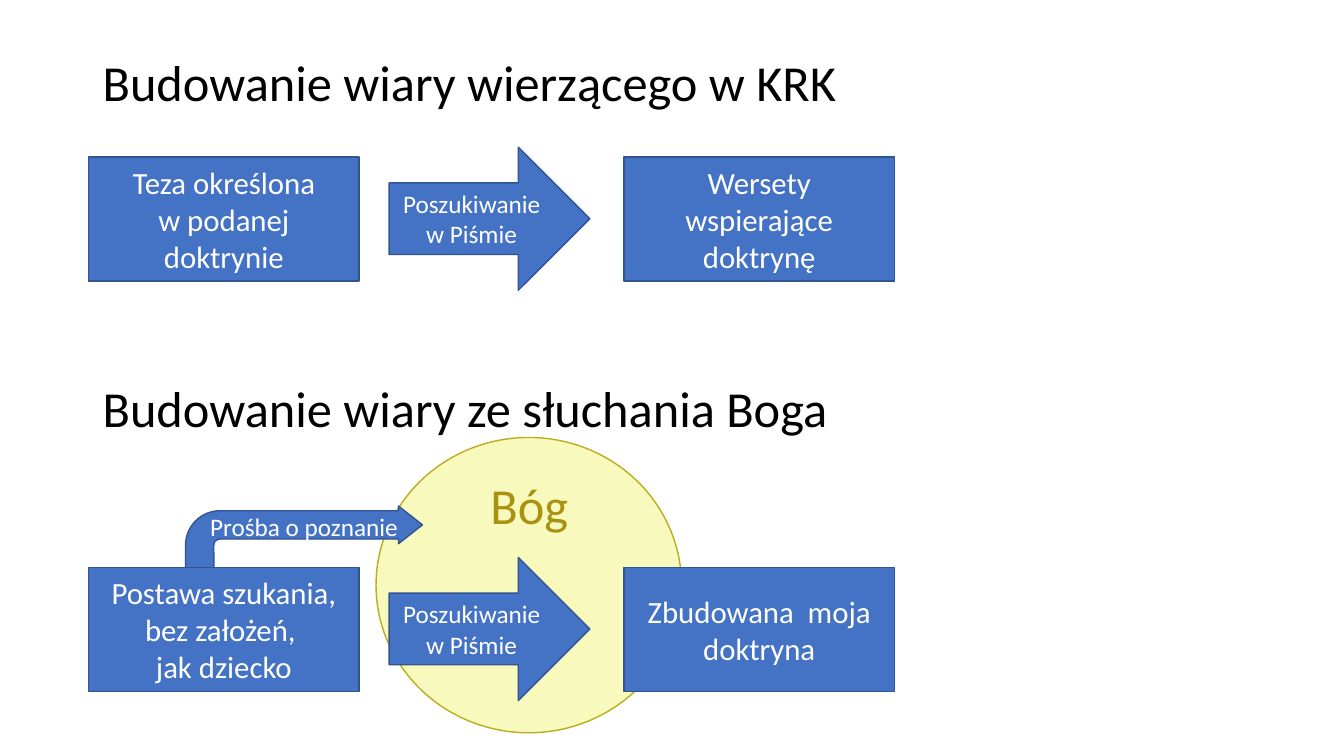
from pptx import Presentation
from pptx.dml.color import RGBColor
from pptx.enum.shapes import MSO_SHAPE
from pptx.enum.text import MSO_ANCHOR, PP_ALIGN
from pptx.util import Emu, Pt

RECT = MSO_SHAPE.RECTANGLE
OVAL = MSO_SHAPE.OVAL
RIGHT_ARROW = MSO_SHAPE.RIGHT_ARROW
BENT_ARROW = MSO_SHAPE.BENT_ARROW
LEFT, CENTER = PP_ALIGN.LEFT, PP_ALIGN.CENTER
TOP, MIDDLE = MSO_ANCHOR.TOP, MSO_ANCHOR.MIDDLE

EMU_PER_PX = 9144  # 100 px to the inch
FONT = "Calibri"
BLUE, NAVY, WHITE, BLACK = "4472C4", "325491", "FFFFFF", "000000"
CREAM, OLIVE, GOLD = "F8F9BC", "BBAD1D", "A9920F"

START_X, SEARCH_X, RESULT_X = 88, 386, 619
DOCTRINE_Y, LISTENING_Y = 156, 563


def px(n):
    return Emu(n * EMU_PER_PX)


def rgb(color):
    return RGBColor.from_string(color)


def write(sp, text, size, color, align=CENTER, anchor=MIDDLE, spacing=1.0):
    tf = sp.text_frame
    tf.word_wrap = True
    tf.vertical_anchor = anchor
    tf.text = text
    for p in tf.paragraphs:
        p.alignment = align
        p.line_spacing = spacing
        for r in p.runs:
            r.font.name = FONT
            r.font.size = Pt(size)
            r.font.color.rgb = rgb(color)


def add_shape(s, kind, x, y, w, h, fill=BLUE, line=NAVY):
    sp = s.shapes.add_shape(kind, px(x), px(y), px(w), px(h))
    sp.shadow.inherit = False
    sp.fill.solid()
    sp.fill.fore_color.rgb = rgb(fill)
    sp.line.color.rgb = rgb(line)
    sp.line.width = Pt(1)
    return sp


def add_heading(s, y, text):
    tb = s.shapes.add_textbox(px(92), px(y), px(1150), px(65))
    write(tb, text, 36, BLACK, LEFT, TOP, 0.9)


def add_box(s, x, y, text):
    write(add_shape(s, RECT, x, y, 268, 123), text, 22, WHITE)


def add_flow(s, y, start, result):
    """Draw a start box, the search arrow and a result box in one row."""
    add_box(s, RESULT_X, y, result)
    arrow = add_shape(s, RIGHT_ARROW, SEARCH_X, y - 10, 199, 142)
    write(arrow, "Poszukiwanie w Piśmie", 18, WHITE)
    add_box(s, START_X, y, start)


def add_god_circle(s):
    add_shape(s, OVAL, 373, 434, 303, 293, CREAM, OLIVE)
    tb = s.shapes.add_textbox(px(418), px(465), px(214), px(67))
    write(tb, "Bóg", 36, GOLD, anchor=TOP)


def add_request_arrow(s):
    sp = add_shape(s, BENT_ARROW, 184, 502, 235, 78)
    for i, value in enumerate((0.36, 0.24, 0.305, 0.438)):
        sp.adjustments[i] = value
    write(sp, "Prośba o poznanie", 18, WHITE, anchor=TOP)


def main():
    prs = Presentation()
    prs.slide_width, prs.slide_height = px(1333), px(750)
    s = prs.slides.add_slide(prs.slide_layouts[6])

    add_god_circle(s)
    add_request_arrow(s)
    add_flow(s, DOCTRINE_Y, "Teza określona\vw podanej doktrynie",
             "Wersety wspierające\ndoktrynę")
    add_flow(s, LISTENING_Y, "Postawa szukania, bez założeń, \vjak dziecko",
             "Zbudowana  moja doktryna")
    add_heading(s, 53, "Budowanie wiary wierzącego w KRK")
    add_heading(s, 376, "Budowanie wiary ze słuchania Boga")

    prs.save("out.pptx")


if __name__ == "__main__":
    main()
